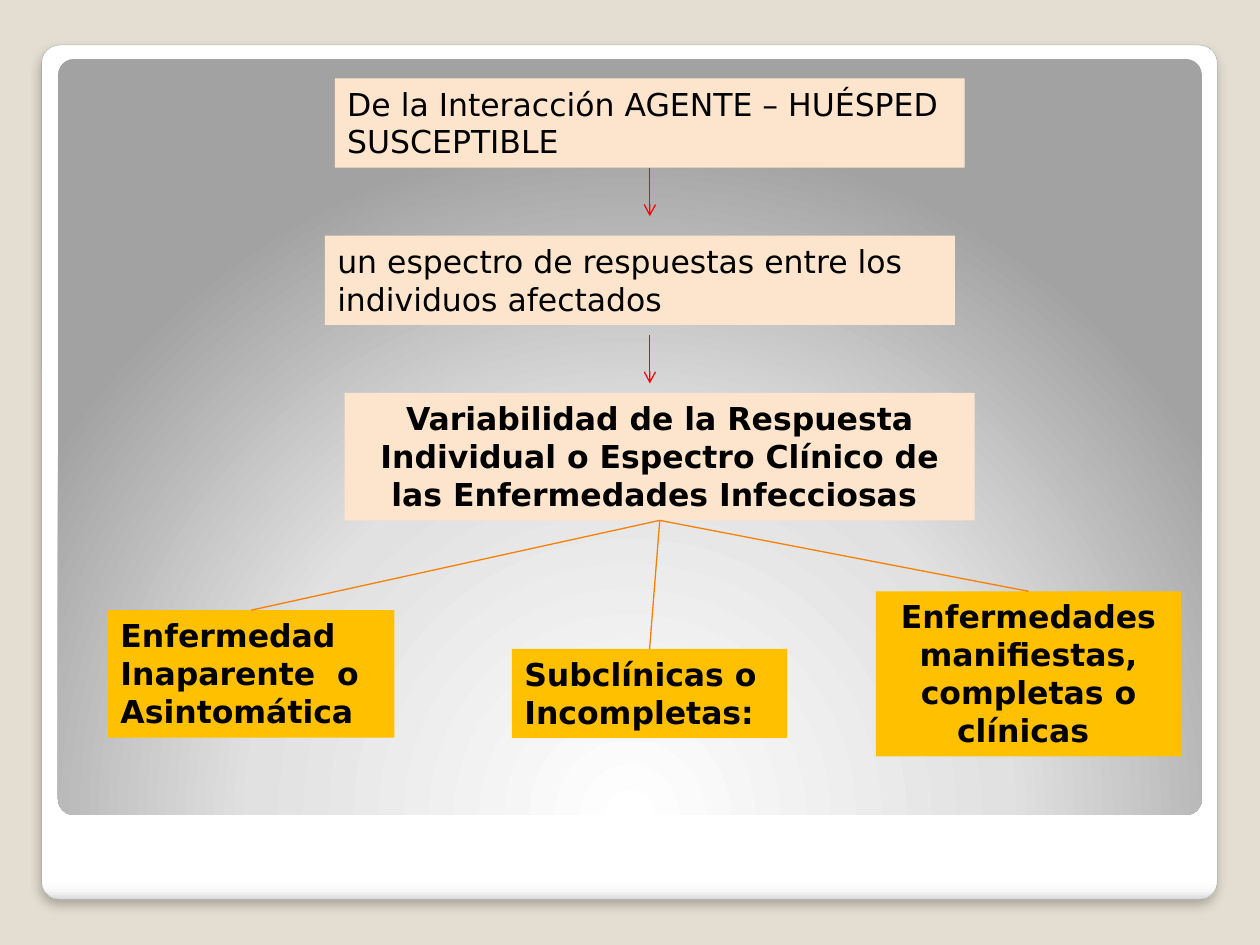
from dataclasses import dataclass

from lxml import etree
from pptx import Presentation
from pptx.dml.color import RGBColor
from pptx.enum.shapes import MSO_CONNECTOR, MSO_SHAPE
from pptx.enum.text import MSO_AUTO_SIZE, PP_ALIGN
from pptx.oxml import parse_xml
from pptx.oxml.ns import nsdecls, qn
from pptx.util import Cm, Pt

STRAIGHT = MSO_CONNECTOR.STRAIGHT
ROUNDED = MSO_SHAPE.ROUNDED_RECTANGLE
FIT_SHAPE = MSO_AUTO_SIZE.SHAPE_TO_FIT_TEXT
LEFT, CENTER = PP_ALIGN.LEFT, PP_ALIGN.CENTER
TOP_SITE, BOTTOM_SITE = 0, 2


@dataclass(frozen=True)
class Theme:
    background: str = "E3DED1"
    frame_line: str = "A4A4A4"
    statement: str = "FDE5CD"
    outcome: str = "FFC000"
    branch: str = "F97F00"
    arrow: str = "FF0000"
    text: str = "000000"
    font: str = "DejaVu Sans"
    size: float = 18
    line_width: float = 0.75
    frame_stops: tuple = ((0, "FFFFFF"), (98, "FFFFFF"), (99, "F7F7F7"), (100, "DADADA"))
    panel_stops: tuple = ((0, "FFFFFF"), (55, "E1E1E1"), (100, "A2A2A2"))


THEME = Theme()
LINEAR_DOWN = '<a:lin ang="5400000" scaled="0"/>'
CIRCLE_FROM_BELOW = ('<a:path path="circle"><a:fillToRect l="50000" t="175000" '
                     'r="50000" b="-75000"/></a:path>')


def rgb(color):
    return RGBColor.from_string(color)


def rounded_card(slide, box, stops, direction):
    """Rounded rectangle with a gradient fill."""
    card = slide.shapes.add_shape(ROUNDED, *(Cm(v) for v in box))
    card.adjustments[0] = 0.021
    card.shadow.inherit = False
    card.line.fill.background()
    card.fill.background()
    stop_xml = "".join(f'<a:gs pos="{pos * 1000}"><a:srgbClr val="{color}"/></a:gs>'
                       for pos, color in stops)
    gradient = parse_xml(f'<a:gradFill {nsdecls("a")} rotWithShape="1">'
                         f'<a:gsLst>{stop_xml}</a:gsLst>{direction}</a:gradFill>')
    properties = card.element.spPr
    properties.replace(properties.find(qn("a:noFill")), gradient)
    return card


def label(slide, left, top, width, height, text, fill, bold, align):
    """Filled text box with one paragraph."""
    box = slide.shapes.add_textbox(Cm(left), Cm(top), Cm(width), Cm(height))
    box.fill.solid()
    box.fill.fore_color.rgb = rgb(fill)
    frame = box.text_frame
    frame.word_wrap = True
    frame.auto_size = FIT_SHAPE
    paragraph = frame.paragraphs[0]
    paragraph.alignment = align
    run = paragraph.add_run()
    run.text = text
    run.font.name = THEME.font
    run.font.size = Pt(THEME.size)
    run.font.bold = bold
    run.font.color.rgb = rgb(THEME.text)
    return box


def connector(slide, start, end, color):
    line = slide.shapes.add_connector(STRAIGHT, *(Cm(v) for v in (*start, *end)))
    line.line.color.rgb = rgb(color)
    line.line.width = Pt(THEME.line_width)
    etree.SubElement(line.element.spPr, qn("a:effectLst"))
    return line


def backdrop(slide, box):
    """White frame with a soft shadow and the grey panel inside it."""
    left, top, width, height = box
    frame = rounded_card(slide, box, THEME.frame_stops, LINEAR_DOWN)
    frame.line.color.rgb = rgb(THEME.frame_line)
    frame.line.width = Pt(0.16)
    effects = frame.element.spPr.find(qn("a:effectLst"))
    effects.append(parse_xml(
        f'<a:outerShdw {nsdecls("a")} blurRad="{Pt(6)}" dist="{Pt(4)}" dir="5400000" '
        'algn="tl" rotWithShape="0"><a:srgbClr val="000000"><a:alpha val="25000"/>'
        '</a:srgbClr></a:outerShdw>'))
    panel_box = (left + 0.33, top + 0.28, width - 0.64, height - 1.98)
    rounded_card(slide, panel_box, THEME.panel_stops, CIRCLE_FROM_BELOW)


def statement_flow(slide, box):
    """Three statements from top to bottom; returns the last one."""
    left, top, width, pitch = box
    statements = (
        (0.2, 1.8, "De la Interacción AGENTE – HUÉSPED SUSCEPTIBLE", False, LEFT),
        (0, 1.8, "un espectro de respuestas entre los individuos afectados", False, LEFT),
        (0.4, 2.57, "Variabilidad de la Respuesta Individual o Espectro Clínico "
                    "de las Enfermedades Infecciosas ", True, CENTER),
    )
    for row, (indent, height, text, bold, align) in enumerate(statements):
        conclusion = label(slide, left + indent, top + row * pitch, width, height,
                           text, THEME.statement, bold, align)

    # Arrows between the statements
    axis = left + 0.2 + width / 2
    for offset in (1.8, 5.17):
        arrow = connector(slide, (axis, top + offset), (axis, top + offset + 0.98),
                          THEME.arrow)
        etree.SubElement(arrow.line._get_or_add_ln(), qn("a:tailEnd"), type="arrow")
    return conclusion


def outcome_fan(slide, origin, conclusion):
    """Three outcomes, each joined to the conclusion above."""
    left, top = origin
    outcomes = (
        (0, 1.8, 5.77, 2.57, "Enfermedad Inaparente  o Asintomática", LEFT),
        (8.14, 2.58, 5.55, 1.8, "Subclínicas o Incompletas:", LEFT),
        (15.48, 1.42, 6.15, 3.33, "Enfermedades manifiestas, completas o clínicas ", CENTER),
    )
    for x, y, width, height, text, align in outcomes:
        outcome = label(slide, left + x, top + y, width, height, text,
                        THEME.outcome, True, align)
        branch = connector(slide, origin, origin, THEME.branch)
        branch.begin_connect(conclusion, BOTTOM_SITE)
        branch.end_connect(outcome, TOP_SITE)


def main():
    deck = Presentation()
    deck.slide_width, deck.slide_height = Cm(25.4), Cm(19.05)
    slide = deck.slides.add_slide(deck.slide_layouts[6])
    slide.background.fill.solid()
    slide.background.fill.fore_color.rgb = rgb(THEME.background)
    backdrop(slide, (0.84, 0.91, 23.7, 17.22))
    conclusion = statement_flow(slide, (6.55, 1.58, 12.7, 3.17))
    outcome_fan(slide, (2.18, 10.5), conclusion)
    deck.save("out.pptx")


if __name__ == "__main__":
    main()
